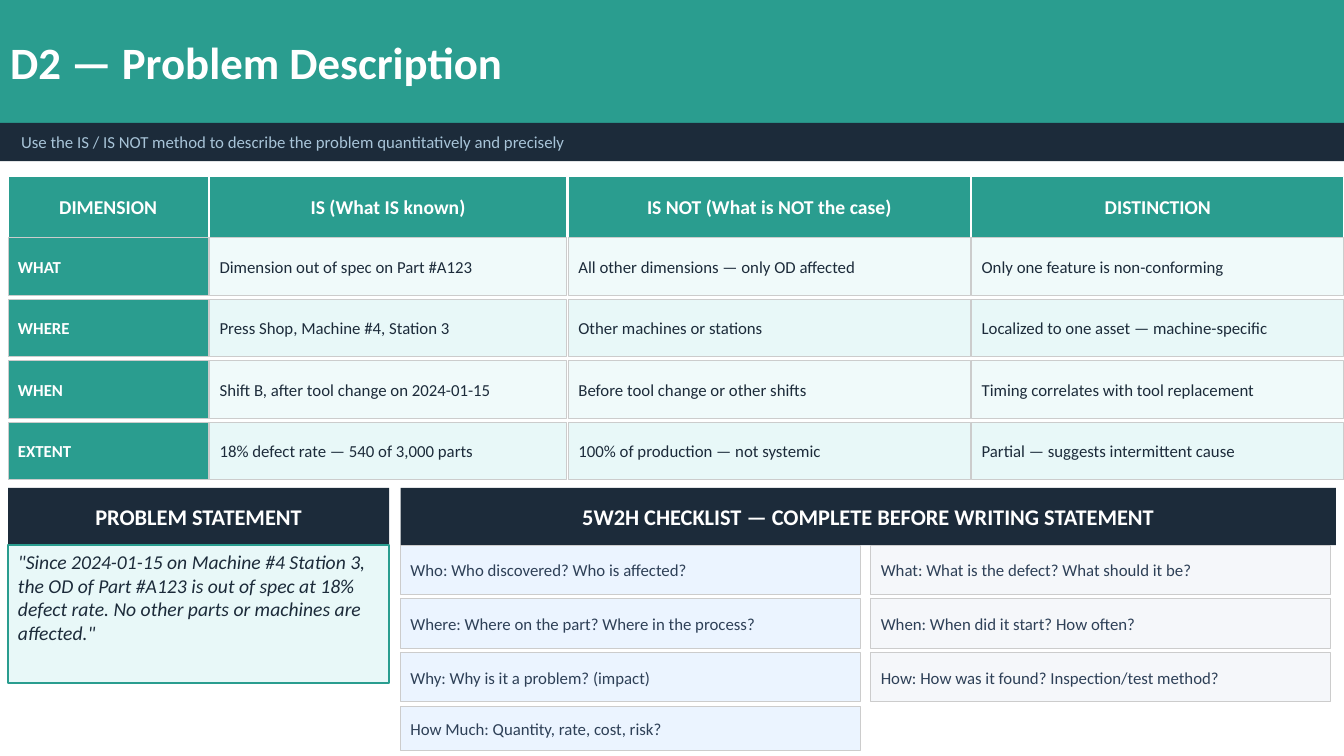
"""Build the D2 problem description slide with its IS / IS NOT grid and checklist."""
import pptx
import pptx.dml.color
import pptx.enum.shapes
import pptx.enum.text
import pptx.util

RGBColor = pptx.dml.color.RGBColor
ALIGN = pptx.enum.text.PP_ALIGN
ANCHOR = pptx.enum.text.MSO_ANCHOR

WHITE = RGBColor(0xFF, 0xFF, 0xFF)
TEAL = RGBColor(0x2A, 0x9D, 0x8F)
NAVY = RGBColor(0x1C, 0x2B, 0x3A)
SLATE = RGBColor(0x2E, 0x40, 0x57)
MIST = RGBColor(0xA8, 0xC4, 0xD8)
BORDER = RGBColor(0xCC, 0xCC, 0xCC)
MINT = RGBColor(0xE8, 0xF8, 0xF8)
PALE_MINT = RGBColor(0xF0, 0xFA, 0xFA)
PALE_BLUE = RGBColor(0xEB, 0xF4, 0xFF)
PALE_GREY = RGBColor(0xF5, 0xF7, 0xFA)

deck = pptx.Presentation()
deck.slide_width = pptx.util.Inches(13.33)
deck.slide_height = pptx.util.Inches(7.5)
page = deck.slides.add_slide(deck.slide_layouts[5])


def fill_box(box, area, text, size, color, fill, bold=False, align=ALIGN.LEFT):
    """Place a box by percent of the slide, colour it and write its text."""
    left, top, width, height = area
    box.left = round(deck.slide_width * left / 100)
    box.top = round(deck.slide_height * top / 100)
    box.width = round(deck.slide_width * width / 100)
    box.height = round(deck.slide_height * height / 100)
    box.fill.solid()
    box.fill.fore_color.rgb = fill
    frame = box.text_frame
    frame.word_wrap = True
    frame.auto_size = pptx.enum.text.MSO_AUTO_SIZE.NONE
    frame.vertical_anchor = ANCHOR.MIDDLE
    para = frame.paragraphs[0]
    para.alignment = align
    span = para.add_run()
    span.text = text
    span.font.name = "Calibri"
    span.font.size = pptx.util.Pt(size)
    span.font.bold = bold
    span.font.color.rgb = color
    return span


def add_box(area, text, size, color, fill, line=None, weight=0.75, **style):
    """Add a rectangle with text and an optional outline."""
    box = page.shapes.add_shape(pptx.enum.shapes.MSO_SHAPE.RECTANGLE, 0, 0, 0, 0)
    box.shadow.inherit = False
    if line is None:
        box.line.fill.background()
    else:
        box.line.color.rgb = line
        box.line.width = pptx.util.Pt(weight)
    return box, fill_box(box, area, text, size, color, fill, **style)


fill_box(page.shapes.title, (0, 0, 100, 16.27), "D2 — Problem Description",
         32, WHITE, TEAL, bold=True)
subtitle, _ = add_box(
    (0, 16.27, 100, 5.07),
    "Use the IS / IS NOT method to describe the problem quantitatively and precisely",
    12, MIST, NAVY)
subtitle.text_frame.margin_left = pptx.util.Inches(0.21)

columns = [(0.6, 14.9), (15.6, 26.55), (42.3, 29.9), (72.3, 27.7)]
grid_top, row_pitch, row_height = 23.33, 8.13, 7.6
grid = [
    ("DIMENSION", "IS (What IS known)", "IS NOT (What is NOT the case)", "DISTINCTION"),
    ("WHAT", "Dimension out of spec on Part #A123",
     "All other dimensions — only OD affected", "Only one feature is non-conforming"),
    ("WHERE", "Press Shop, Machine #4, Station 3",
     "Other machines or stations", "Localized to one asset — machine-specific"),
    ("WHEN", "Shift B, after tool change on 2024-01-15",
     "Before tool change or other shifts", "Timing correlates with tool replacement"),
    ("EXTENT", "18% defect rate — 540 of 3,000 parts",
     "100% of production — not systemic", "Partial — suggests intermittent cause"),
]
for row, texts in enumerate(grid):
    top = grid_top + row * row_pitch
    for column, ((left, width), text) in enumerate(zip(columns, texts)):
        if row == 0:
            add_box((left, top, width, row_pitch), text, 14, WHITE, TEAL, WHITE,
                    bold=True, align=ALIGN.CENTER)
        elif column == 0:
            add_box((left, top, width, row_height), text, 12, WHITE, TEAL, BORDER, bold=True)
        else:
            add_box((left, top, width, row_height), text, 12, NAVY,
                    PALE_MINT if row % 2 else MINT, BORDER)

statement_left, statement_width = 0.6, 28.35
checklist_left, checklist_width = 29.8, 69.6
heading_top, heading_height = 64.53, 7.6
body_top = heading_top + heading_height
for left, width, text in [
    (statement_left, statement_width, "PROBLEM STATEMENT"),
    (checklist_left, checklist_width, "5W2H CHECKLIST — COMPLETE BEFORE WRITING STATEMENT"),
]:
    add_box((left, heading_top, width, heading_height), text, 16, WHITE, NAVY,
            bold=True, align=ALIGN.CENTER)

statement, quote = add_box(
    (statement_left, body_top, statement_width, 18.27),
    "\"Since 2024-01-15 on Machine #4 Station 3, the OD of Part #A123 is out of spec "
    "at 18% defect rate. No other parts or machines are affected.\"",
    14, NAVY, MINT, TEAL, weight=1.5)
statement.text_frame.vertical_anchor = ANCHOR.TOP
quote.font.italic = True

questions = [
    "Who: Who discovered? Who is affected?",
    "What: What is the defect? What should it be?",
    "Where: Where on the part? Where in the process?",
    "When: When did it start? How often?",
    "Why: Why is it a problem? (impact)",
    "How: How was it found? Inspection/test method?",
    "How Much: Quantity, rate, cost, risk?",
]
for index, question in enumerate(questions):
    row, column = divmod(index, 2)
    height = 5.87 if row == 3 else 6.53
    add_box((checklist_left + column * 35, body_top + row * 7.1, 34.2, height),
            question, 12, SLATE, PALE_GREY if column else PALE_BLUE, BORDER)

deck.save("out.pptx")
